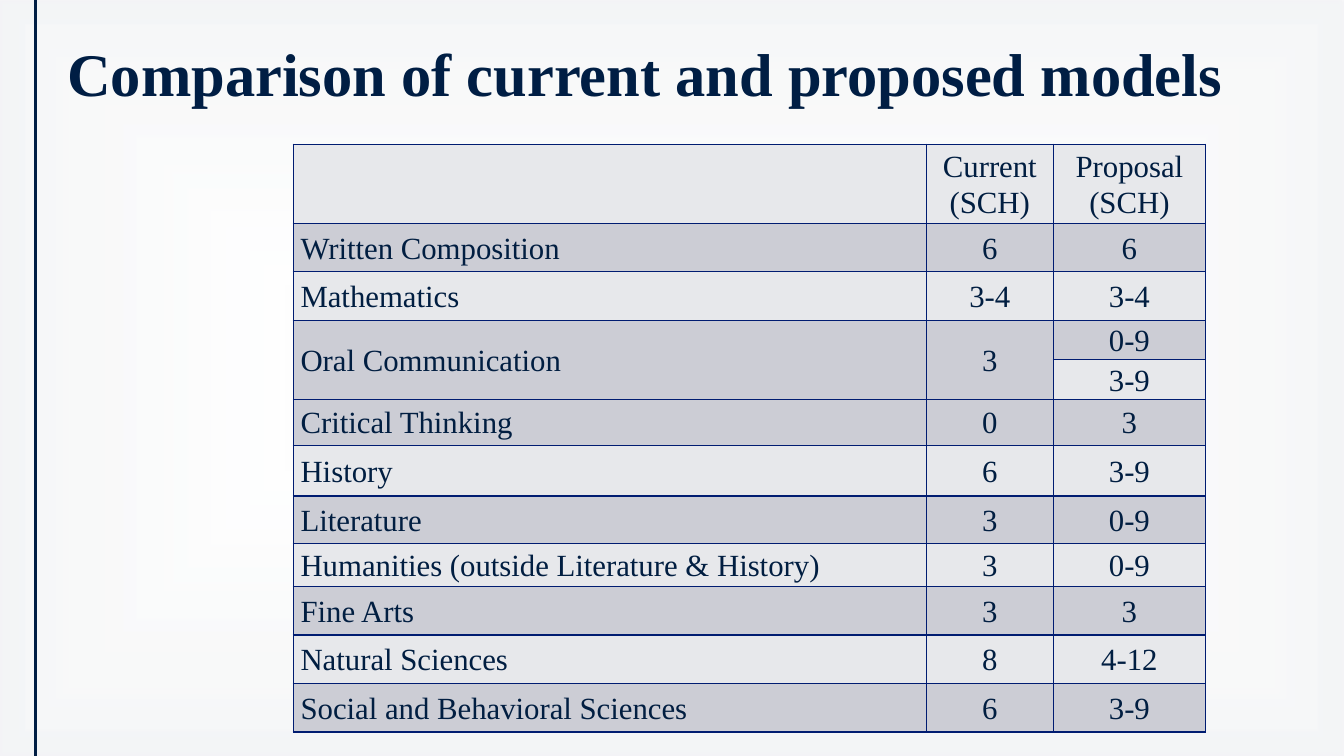
from lxml import etree
from pptx import Presentation
from pptx.dml.color import RGBColor
from pptx.enum.shapes import MSO_CONNECTOR, MSO_SHAPE
from pptx.enum.text import MSO_ANCHOR, PP_ALIGN
from pptx.oxml import parse_xml
from pptx.oxml.ns import nsdecls, qn
from pptx.util import Pt

STRAIGHT = MSO_CONNECTOR.STRAIGHT
RECTANGLE = MSO_SHAPE.RECTANGLE
MIDDLE = MSO_ANCHOR.MIDDLE
LEFT, CENTER = PP_ALIGN.LEFT, PP_ALIGN.CENTER

NAVY = RGBColor(0x00, 0x1E, 0x44)
TABLE_TEXT = RGBColor(0x01, 0x1E, 0x41)
BORDER = RGBColor(0x00, 0x1C, 0x71)
LIGHT_ROW = RGBColor(0xE7, 0xE8, 0xEB)
DARK_ROW = RGBColor(0xCC, 0xCD, 0xD5)
FONT = "Times New Roman"

SLIDE_WIDTH, SLIDE_HEIGHT = 960, 540
COLUMN_WIDTHS = [452.2, 90.7, 108.7]
ROWS = [  # height, then the text of each column
    (49.7, "", "Current (SCH)", "Proposal\n(SCH)"),
    (34.6, "Written Composition", "6", "6"),
    (34.6, "Mathematics", "3-4", "3-4"),
    (23.8, "Oral Communication", "3", "0-9"),
    (23.8, "", "", "3-9"),
    (33.1, "Critical Thinking", "0", "3"),
    (36, "History", "6", "3-9"),
    (33.8, "Literature", "3", "0-9"),
    (31, "Humanities (outside Literature & History)", "3", "0-9"),
    (34.6, "Fine Arts", "3", "3"),
    (34.6, "Natural Sciences", "8", "4-12"),
    (34.6, "Social and Behavioral Sciences", "6", "3-9"),
]
ORAL_COMMUNICATION_ROW = 3


def add_background(slide, left, top, width, height):
    """Vignette that darkens slightly towards the edges, and the side rule."""
    vignette = slide.shapes.add_shape(
        RECTANGLE, Pt(left), Pt(top), Pt(width), Pt(height))
    vignette.shadow.inherit = False
    vignette.line.fill.background()
    vignette.fill.background()
    properties = vignette.fill._xPr
    gradient = parse_xml(
        f'<a:gradFill {nsdecls("a")} rotWithShape="1"><a:gsLst>'
        '<a:gs pos="0"><a:srgbClr val="FFFFFF"><a:alpha val="0"/></a:srgbClr></a:gs>'
        f'<a:gs pos="100000"><a:srgbClr val="{TABLE_TEXT}"><a:alpha val="4000"/>'
        '</a:srgbClr></a:gs></a:gsLst><a:path path="rect">'
        '<a:fillToRect l="50000" t="50000" r="50000" b="50000"/></a:path></a:gradFill>')
    properties.replace(properties.find(qn("a:noFill")), gradient)

    rule_x = Pt(left + 25.2)
    rule = slide.shapes.add_connector(
        STRAIGHT, rule_x, Pt(top), rule_x, Pt(top + height))
    rule.line.color.rgb = NAVY
    rule.line.width = Pt(2.25)
    etree.SubElement(rule._element.spPr, qn("a:effectLst"))


def add_title(slide, text, left, top, width, height):
    box = slide.shapes.add_textbox(Pt(left), Pt(top), Pt(width), Pt(height))
    frame = box.text_frame
    frame.word_wrap = True
    frame.vertical_anchor = MIDDLE
    paragraph = frame.paragraphs[0]
    paragraph.text = text
    paragraph.line_spacing = 0.9
    paragraph.font.name = FONT
    paragraph.font.size = Pt(43.2)
    paragraph.font.bold = True
    paragraph.font.color.rgb = NAVY


def add_borders(cell):
    """Outline all four sides; call before the cell is filled."""
    properties = cell._tc.get_or_add_tcPr()
    for side in ("lnL", "lnR", "lnT", "lnB"):
        properties.append(parse_xml(
            f'<a:{side} {nsdecls("a")} w="{Pt(1)}"><a:solidFill>'
            f'<a:srgbClr val="{BORDER}"/></a:solidFill></a:{side}>'))


def style_cell(cell, text, alignment, fill_color):
    add_borders(cell)
    cell.fill.solid()
    cell.fill.fore_color.rgb = fill_color
    cell.vertical_anchor = MIDDLE
    cell.margin_left = cell.margin_right = Pt(5.2)
    cell.margin_top = cell.margin_bottom = 0
    cell.text_frame.text = text
    for paragraph in cell.text_frame.paragraphs:
        paragraph.alignment = alignment
        paragraph.line_spacing = 1.07
        paragraph.font.name = FONT
        paragraph.font.size = Pt(22)
        paragraph.font.color.rgb = TABLE_TEXT


def add_comparison_table(slide, left, top, width, height):
    table = slide.shapes.add_table(
        len(ROWS), len(COLUMN_WIDTHS),
        Pt(left), Pt(top), Pt(width), Pt(height)).table
    table.first_row = False
    table.horz_banding = False
    for column, column_width in zip(table.columns, COLUMN_WIDTHS):
        column.width = Pt(column_width)

    for row_index, (row_height, *texts) in enumerate(ROWS):
        table.rows[row_index].height = Pt(row_height)
        fill_color = DARK_ROW if row_index % 2 else LIGHT_ROW
        for column_index, text in enumerate(texts):
            alignment = CENTER if column_index else LEFT
            style_cell(table.cell(row_index, column_index),
                       text, alignment, fill_color)

    # Oral Communication covers two proposal rows
    for column_index in (0, 1):
        table.cell(ORAL_COMMUNICATION_ROW, column_index).merge(
            table.cell(ORAL_COMMUNICATION_ROW + 1, column_index))


def main():
    presentation = Presentation()
    presentation.slide_width = Pt(SLIDE_WIDTH)
    presentation.slide_height = Pt(SLIDE_HEIGHT)
    slide = presentation.slides.add_slide(presentation.slide_layouts[6])
    add_background(slide, 0, 0, SLIDE_WIDTH, SLIDE_HEIGHT)
    add_title(slide, "Comparison of current and proposed models",
              41, 11.5, 867, 86.4)
    add_comparison_table(slide, 209.5, 103, 651.6, 414)
    presentation.save("out.pptx")


if __name__ == "__main__":
    main()
